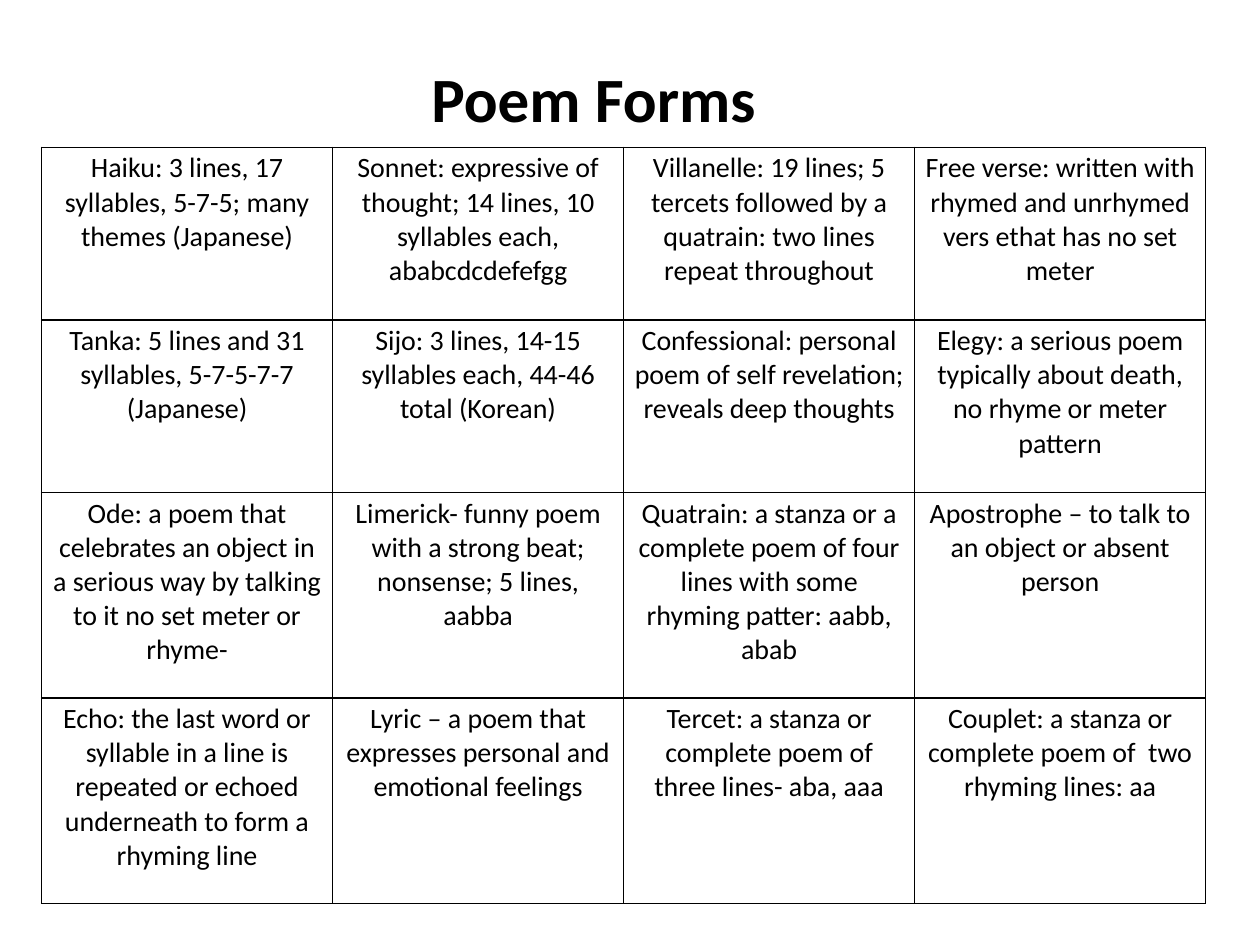
from lxml.etree import SubElement, Element
from pptx import Presentation
from pptx.dml.color import RGBColor
from pptx.enum.text import MSO_AUTO_SIZE, PP_ALIGN
from pptx.oxml.ns import qn
from pptx.util import Inches, Pt

BLACK = RGBColor(0x00, 0x00, 0x00)
WHITE = RGBColor(0xFF, 0xFF, 0xFF)
FONT = "Calibri"
COLUMN_WIDTH = 2.31
ROW_HEIGHTS = [1.37, 1.37, 1.63, 1.63]
POEM_FORMS = [
    [
        "Haiku: 3 lines, 17 syllables, 5-7-5; many themes (Japanese)",
        "Sonnet: expressive of thought; 14 lines, 10 syllables each, ababcdcdefefgg",
        "Villanelle: 19 lines; 5 tercets followed by a quatrain: two lines repeat throughout",
        "Free verse: written with rhymed and unrhymed vers ethat has no set meter",
    ],
    [
        "Tanka: 5 lines and 31 syllables, 5-7-5-7-7 (Japanese)",
        "Sijo: 3 lines, 14-15 syllables each, 44-46 total (Korean)",
        "Confessional: personal poem of self revelation; reveals deep thoughts",
        "Elegy: a serious poem typically about death, no rhyme or meter pattern",
    ],
    [
        "Ode: a poem that celebrates an object in a serious way by talking to it no set meter or rhyme-",
        "Limerick- funny poem with a strong beat; nonsense; 5 lines, aabba",
        "Quatrain: a stanza or a complete poem of four lines with some rhyming patter: aabb, abab",
        "Apostrophe – to talk to an object or absent person",
    ],
    [
        "Echo: the last word or syllable in a line is repeated or echoed underneath to form a rhyming line",
        "Lyric – a poem that expresses personal and emotional feelings",
        "Tercet: a stanza or complete poem of three lines- aba, aaa",
        "Couplet: a stanza or complete poem of  two rhyming lines: aa",
    ],
]


def write_centered(text_frame, text, size, bold=False):
    paragraph = text_frame.paragraphs[0]
    paragraph.alignment = PP_ALIGN.CENTER
    run = paragraph.add_run()
    run.text = text
    run.font.name = FONT
    run.font.size = Pt(size)
    run.font.bold = bold
    run.font.color.rgb = BLACK


def add_borders(cell):
    """Draw a 1 pt black line on all four sides; lines must precede the fill."""
    properties = cell._tc.get_or_add_tcPr()
    for index, side in enumerate(["a:lnL", "a:lnR", "a:lnT", "a:lnB"]):
        line = Element(qn(side), w=str(Pt(1)))
        fill = SubElement(line, qn("a:solidFill"))
        SubElement(fill, qn("a:srgbClr"), val=str(BLACK))
        properties.insert(index, line)


presentation = Presentation()
presentation.slide_width = Inches(10)
presentation.slide_height = Inches(7.5)
slide = presentation.slides.add_slide(presentation.slide_layouts[6])

column_count = len(POEM_FORMS[0])
table = slide.shapes.add_table(
    len(POEM_FORMS), column_count,
    Inches(0.33), Inches(1.17),
    Inches(COLUMN_WIDTH * column_count), Inches(sum(ROW_HEIGHTS)),
).table
table.first_row = False
table.horz_banding = False
for column in table.columns:
    column.width = Inches(COLUMN_WIDTH)

for row_index, (height, forms) in enumerate(zip(ROW_HEIGHTS, POEM_FORMS)):
    table.rows[row_index].height = Inches(height)
    for column_index, form in enumerate(forms):
        cell = table.cell(row_index, column_index)
        cell.margin_left = cell.margin_right = Inches(0.07)
        cell.margin_top = cell.margin_bottom = Inches(0.03)
        cell.fill.solid()
        cell.fill.fore_color.rgb = WHITE
        add_borders(cell)
        write_centered(cell.text_frame, form, 16)

title = slide.shapes.add_textbox(Inches(2.75), Inches(0.42), Inches(3.92), Inches(0.71))
title.text_frame.word_wrap = True
title.text_frame.auto_size = MSO_AUTO_SIZE.SHAPE_TO_FIT_TEXT
write_centered(title.text_frame, "Poem Forms", 36, bold=True)

presentation.save("out.pptx")
